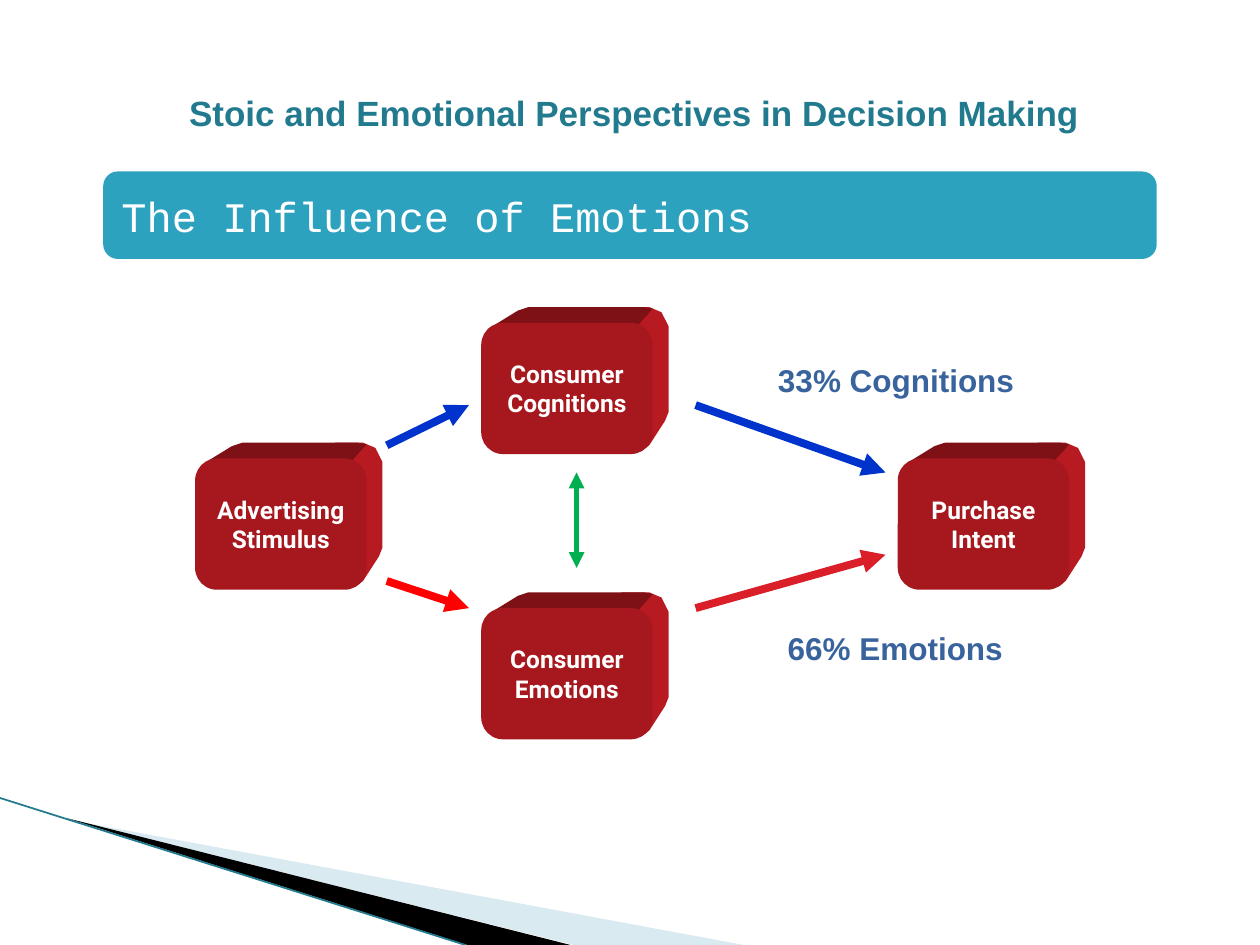
from dataclasses import dataclass

from lxml import etree
from pptx import Presentation
from pptx import util as u
from pptx.dml.color import RGBColor
from pptx.enum import shapes, text
from pptx.oxml.ns import qn


@dataclass(frozen=True)
class Theme:
    title: str = "227A8F"
    banner: str = "2DA2BF"
    label: str = "39639D"
    white: str = "FFFFFF"
    black: str = "000000"
    pale: str = "D9EAF1"
    cube_front: str = "A6181E"
    cube_top: str = "7E1116"
    cube_side: str = "B81A21"
    cognition: str = "0033CC"
    stimulus: str = "FF0000"
    emotion: str = "DA1F28"
    exchange: str = "00B050"
    sans: str = "Arial"
    mono: str = "Courier New"
    cube_font: str = "Roboto"
    title_size: int = 20
    banner_size: int = 24
    label_size: int = 18
    cube_size: int = 14


THEME = Theme()
CUBE_WIDTH, CUBE_HEIGHT = 98, 75
# Faces behind the front of a cube, relative to its front's top left corner
CUBE_SIDE = [(80, -9), (96, -9), (103, -6), (107, 2), (107, 51), (105, 56),
             (96, 70), (92, 73), (84, 74)]
CUBE_TOP = [(3, 5), (8, 1), (21, -7), (27, -9), (93, -9), (98, -8), (89, 2),
            (80, 8), (10, 8)]


def paint(shape, color):
    shape.shadow.inherit = False
    shape.fill.solid()
    shape.fill.fore_color.rgb = RGBColor.from_string(color)
    shape.line.fill.background()


def add_polygon(page, points, color):
    corners = [(u.Pt(x), u.Pt(y)) for x, y in points]
    builder = page.shapes.build_freeform(*corners[0], scale=1.0)
    builder.add_line_segments(corners[1:], close=True)
    paint(builder.convert_to_shape(), color)


def add_block(page, left, top, width, height, color):
    block = page.shapes.add_shape(
        shapes.MSO_SHAPE.ROUNDED_RECTANGLE,
        u.Pt(left), u.Pt(top), u.Pt(width), u.Pt(height))
    block.adjustments[0] = 0.167
    paint(block, color)
    return block


def write(box, lines, font, size, color, bold=True, centred=False):
    """Put one paragraph in the box, with a line break between its lines."""
    para = box.text_frame.paragraphs[0]
    para.alignment = text.PP_ALIGN.CENTER if centred else text.PP_ALIGN.LEFT
    for index, line in enumerate(lines):
        if index:
            para.add_line_break()
        span = para.add_run()
        span.text = line
        span.font.name = font
        span.font.size = u.Pt(size)
        span.font.bold = bold
        span.font.color.rgb = RGBColor.from_string(color)


def add_text(page, left, top, width, height, words, size, color, centred=False):
    box = page.shapes.add_textbox(u.Pt(left), u.Pt(top), u.Pt(width), u.Pt(height))
    box.text_frame.word_wrap = True
    write(box, [words], THEME.sans, size, color, centred=centred)


def add_banner(page, words):
    banner = add_block(page, 59, 98, 602, 50, THEME.banner)
    frame = banner.text_frame
    frame.word_wrap = True
    frame.vertical_anchor = text.MSO_ANCHOR.MIDDLE
    frame.margin_left = u.Pt(8)
    write(banner, [words], THEME.mono, THEME.banner_size, THEME.white, bold=False)


def add_cube(page, left, top, lines):
    for face, color in ((CUBE_SIDE, THEME.cube_side), (CUBE_TOP, THEME.cube_top)):
        add_polygon(page, [(left + x, top + y) for x, y in face], color)
    front = add_block(page, left, top, CUBE_WIDTH, CUBE_HEIGHT, THEME.cube_front)
    front.text_frame.word_wrap = False
    front.text_frame.vertical_anchor = text.MSO_ANCHOR.MIDDLE
    write(front, lines, THEME.cube_font, THEME.cube_size, THEME.white, centred=True)


def add_line(page, start, end, color, width, ends=()):
    """Draw a line; ends names the arrowheads wanted, headEnd before tailEnd."""
    line = page.shapes.add_connector(
        shapes.MSO_CONNECTOR.STRAIGHT, *(u.Pt(value) for value in start + end))
    line.line.width = u.Pt(width)
    line.line.color.rgb = RGBColor.from_string(color)
    for name in ends:
        etree.SubElement(line.line._get_or_add_ln(), qn("a:" + name), type="triangle")
    etree.SubElement(line._element.spPr, qn("a:effectLst"))


def add_corner_sweep(page):
    add_polygon(page, [(39.5, 468.5), (425, 540), (328, 540)], THEME.pale)
    add_polygon(page, [(38, 467.5), (326, 540), (267, 540)], THEME.black)
    add_line(page, (0, 456), (266, 540), THEME.title, 1)


def main():
    deck = Presentation()
    deck.slide_width, deck.slide_height = u.Pt(720), u.Pt(540)
    page = deck.slides.add_slide(deck.slide_layouts[6])

    add_corner_sweep(page)
    for left, top, lines in (
        (111.5, 262, ("Advertising", "Stimulus")),
        (513, 262, ("Purchase", "Intent")),
        (275, 347.5, ("Consumer", "Emotions")),
        (275, 184.5, ("Consumer", "Cognitions")),
    ):
        add_cube(page, left, top, lines)

    for start, end, color in (
        ((221, 254.5), (268, 231.5), THEME.cognition),
        ((221, 332), (268, 347.5), THEME.stimulus),
        ((397.5, 347.5), (506, 317), THEME.emotion),
        ((397.5, 231.5), (506, 270), THEME.cognition),
    ):
        add_line(page, start, end, color, 4.5, ["tailEnd"])
    add_line(page, (329.5, 270), (329.5, 324.5), THEME.exchange, 3,
             ["headEnd", "tailEnd"])

    add_text(page, 437.5, 202.5, 180, 29, "33% Cognitions",
             THEME.label_size, THEME.label)
    add_text(page, 443, 356, 180, 29, "66% Emotions",
             THEME.label_size, THEME.label)
    add_text(page, 77.5, 48.5, 570, 31.5,
             "Stoic and Emotional Perspectives in Decision Making",
             THEME.title_size, THEME.title, centred=True)
    add_banner(page, "The Influence of Emotions")
    deck.save("out.pptx")


if __name__ == "__main__":
    main()
